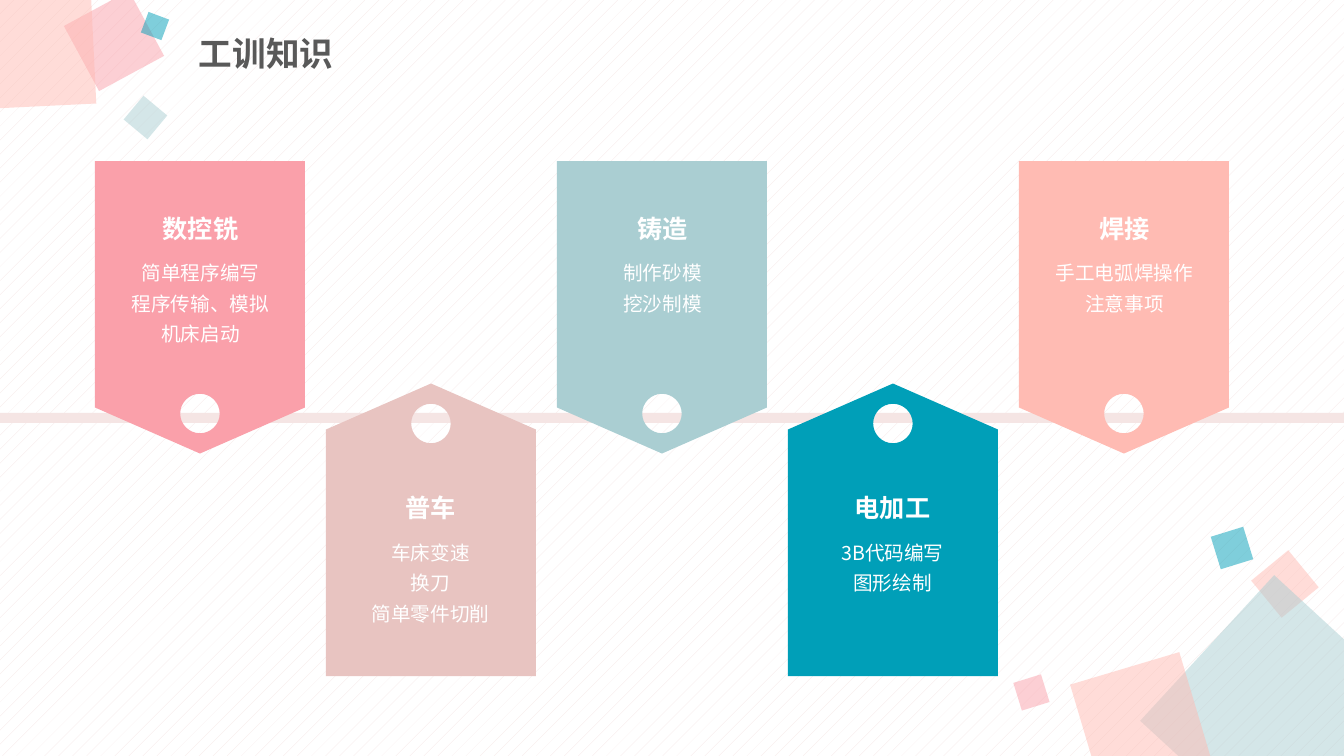
from lxml import etree
from pptx import Presentation
from pptx import util as u
from pptx.dml.color import RGBColor
from pptx.enum import dml, shapes, text
from pptx.oxml import ns

PX = 12192000 / 1344
CJK, LATIN = "Noto Sans CJK SC", "Quicksand"
WHITE = RGBColor(0xFF, 0xFF, 0xFF)
GREY = RGBColor(0x59, 0x59, 0x59)
BLUSH = RGBColor(0xF5, 0xE5, 0xE4)
PINK = RGBColor(0xFA, 0xA0, 0xAA)
ROSE = RGBColor(0xE8, 0xC4, 0xC1)
MIST = RGBColor(0xAA, 0xCE, 0xD2)
TEAL = RGBColor(0x00, 0x9F, 0xB8)
PEACH = RGBColor(0xFF, 0xBB, 0xB3)

CONFETTI = [
    (1261, 560, 48, 320.6, PEACH),
    (1181, 616, 198, 42.6, MIST),
    (1084, 666, 114, 343.4, PEACH),
    (1017, 678, 29, 342.8, PINK),
    (1215, 531, 34, 342.8, TEAL),
    (77, 4, 74, 331.6, PINK),
    (-46, -32, 139, 357.2, PEACH),
    (130, 102, 31, 309.8, MIST),
    (144, 15, 22, 290.5, TEAL),
]
TOPICS = [
    ("数控铣", ["简单程序编写", "程序传输、模拟", "机床启动"], PINK),
    ("普车", ["车床变速", "换刀", "简单零件切削"], ROSE),
    ("铸造", ["制作砂模", "挖沙制模"], MIST),
    ("电加工", ["3B代码编写", "图形绘制"], TEAL),
    ("焊接", ["手工电弧焊操作", "注意事项"], PEACH),
]

HEADING = {"size": u.Pt(24), "bold": True, "name": CJK}
TOPIC = {"size": u.Pt(18), "bold": True, "name": LATIN}
DETAIL = {"size": u.Pt(14), "bold": False, "name": CJK}
HEADING_LINES = {"line_spacing": 0.9, "space_before": u.Pt(10)}
CENTRED = {"line_spacing": 1.3, "alignment": text.PP_ALIGN.CENTER}


def px(*lengths):
    """Turn px lengths into EMU."""
    return [u.Emu(round(length * PX)) for length in lengths]


def assign(target, values):
    """Set each attribute in values on target."""
    for key, value in values.items():
        setattr(target, key, value)


def paint(shape, colour):
    """Give a shape a flat fill with no line or shadow."""
    shape.shadow.inherit = False
    shape.fill.solid()
    shape.fill.fore_color.rgb = colour
    shape.line.fill.background()


def write(slide, box, lines, font, colour, paragraph_format, frame_format):
    """Write one paragraph per line in the given box."""
    frame = slide.shapes.add_textbox(*px(*box)).text_frame
    assign(frame, {"word_wrap": True, **frame_format})
    for index, line in enumerate(lines):
        paragraph = frame.add_paragraph() if index else frame.paragraphs[0]
        assign(paragraph, paragraph_format)
        run = paragraph.add_run()
        run.text = line
        assign(run.font, font)
        run.font.color.rgb = colour
        east_asian = etree.SubElement(run.font._element, ns.qn("a:ea"))
        east_asian.set("typeface", CJK)


def add_square(slide, left, top, side, angle, colour):
    """Place one half-transparent tilted square on the slide's layout."""
    square = slide.shapes.add_shape(
        shapes.MSO_SHAPE.RECTANGLE, *px(left, top, side, side))
    paint(square, colour)
    square.rotation = angle
    tint = square.fill._xPr.find(".//" + ns.qn("a:srgbClr"))
    etree.SubElement(tint, ns.qn("a:alpha")).set("val", "50000")
    slide.slide_layout.shapes._spTree.append(square._element)


def add_band(slide, left, top, width, height):
    """Place the band that the tags hang on."""
    band = slide.shapes.add_shape(
        shapes.MSO_SHAPE.RECTANGLE, *px(left, top, width, height))
    paint(band, BLUSH)


def rim_points(x, y, radius):
    """List the curve points of a circle after its rightmost point."""
    bend = 0.55
    points = []
    for cos, sin in [(1, 0), (0, 1), (-1, 0), (0, -1)]:
        points += [(cos - bend * sin, sin + bend * cos),
                   (bend * cos - sin, bend * sin + cos),
                   (-sin, cos)]
    return [(x + radius * dx, y + radius * dy) for dx, dy in points]


def bend_rim(tag, count):
    """Join the last straight segments, three at a time, into curves."""
    segments = list(tag._element.iter(ns.qn("a:lnTo")))[-count:]
    for start in range(0, count, 3):
        curve = etree.Element(ns.qn("a:cubicBezTo"))
        segments[start].addprevious(curve)
        for segment in segments[start:start + 3]:
            curve.append(segment[0])
            segment.getparent().remove(segment)


def add_tag(slide, left, top, width, height, topic, points_up):
    """Draw a pointed tag with a punched hole, its topic and its details."""
    name, details, colour = topic
    middle, right = left + width / 2, left + width
    tip, base, inward = (
        (top, top + height, 1) if points_up else (top + height, top, -1))
    shoulder, hole, radius = tip + 46 * inward, tip + 40 * inward, 19.75
    outline = [(right, shoulder), (right, base), (left, base), (left, shoulder)]
    rim = rim_points(middle, hole, radius)

    builder = slide.shapes.build_freeform(*px(middle, tip))
    builder.add_line_segments([px(*point) for point in outline], close=True)
    builder.move_to(*px(middle + radius, hole))
    builder.add_line_segments([px(*point) for point in rim], close=True)
    tag = builder.convert_to_shape()
    bend_rim(tag, len(rim))
    paint(tag, colour)

    text_left = left + (10 if points_up else 11)
    name_top = top + (95 if points_up else 38)
    grow = {"auto_size": text.MSO_AUTO_SIZE.SHAPE_TO_FIT_TEXT}
    write(slide, (text_left, name_top + 50, 189, 7 + 31 * len(details)),
          details, DETAIL, WHITE, CENTRED, grow)
    write(slide, (text_left, name_top, 189, 46),
          [name], TOPIC, WHITE, CENTRED, grow)


def add_topics(slide, left, top, width, height):
    """Lay the tags along the box, hanging and standing by turns."""
    tag_width, tag_height = 210, 292.5
    pitch = (width - tag_width) / (len(TOPICS) - 1)
    for index, topic in enumerate(TOPICS):
        points_up = index % 2 == 1
        tag_top = top + height - tag_height if points_up else top
        add_tag(slide, left + index * pitch, tag_top,
                tag_width, tag_height, topic, points_up)


def add_backdrop(slide):
    """Fill the background with a pattern and scatter the squares."""
    fill = slide.background.fill
    fill.patterned()
    fill.pattern = dml.MSO_PATTERN.PERCENT_5
    fill.fore_color.rgb = BLUSH
    fill.back_color.rgb = WHITE
    for square in CONFETTI:
        add_square(slide, *square)


def main():
    """Build the slide and save it."""
    deck = Presentation()
    deck.slide_width, deck.slide_height = px(1344, 756)
    slide = deck.slides.add_slide(deck.slide_layouts[6])
    add_backdrop(slide)
    write(slide, (189, 27, 618, 58), ["工训知识"], HEADING, GREY, HEADING_LINES,
          {"vertical_anchor": text.MSO_ANCHOR.MIDDLE})
    add_band(slide, 0, 413, 1344, 10)
    add_topics(slide, 95, 161, 1134, 515)
    deck.save("out.pptx")


if __name__ == "__main__":
    main()
